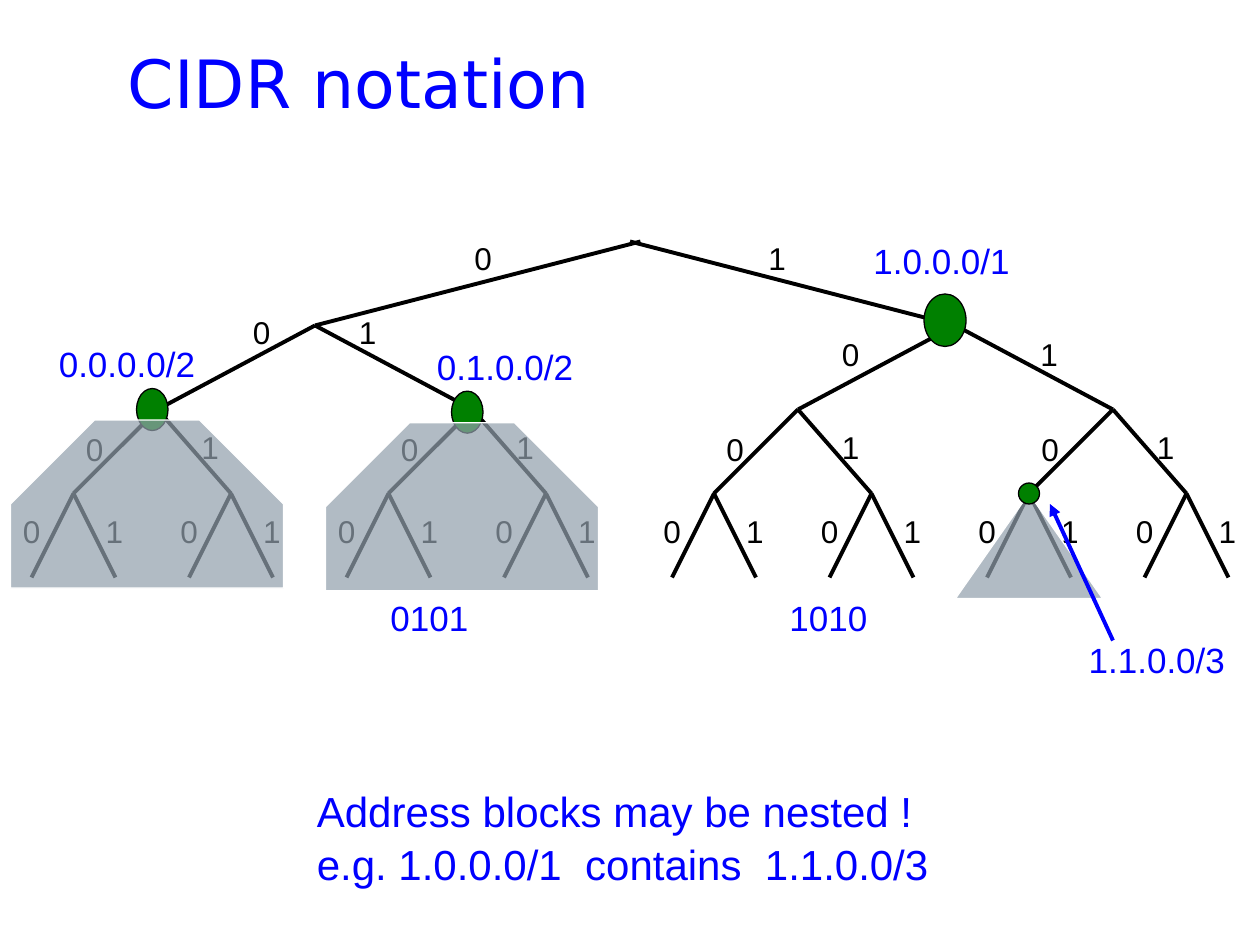
from dataclasses import dataclass

from lxml import etree
from pptx import Presentation
from pptx.dml.color import RGBColor
from pptx.enum.shapes import MSO_CONNECTOR, MSO_SHAPE
from pptx.enum.text import MSO_ANCHOR, MSO_AUTO_SIZE
from pptx.oxml.ns import qn
from pptx.util import Pt

STRAIGHT = MSO_CONNECTOR.STRAIGHT
OVAL = MSO_SHAPE.OVAL
SNIPPED = MSO_SHAPE.SNIP_2_SAME_RECTANGLE
TRIANGLE = MSO_SHAPE.ISOSCELES_TRIANGLE
TOP = MSO_ANCHOR.TOP
MIDDLE = MSO_ANCHOR.MIDDLE
FIT_SHAPE = MSO_AUTO_SIZE.SHAPE_TO_FIT_TEXT
NO_FIT = MSO_AUTO_SIZE.NONE


@dataclass(frozen=True)
class Theme:
    blue: str = "0000FF"
    black: str = "000000"
    white: str = "FFFFFF"
    green: str = "008000"
    shade: str = "92A0AD"
    shade_alpha: int = 71
    title_font: str = "DejaVu Sans"
    body_font: str = "Arial"
    title_size: float = 38
    note_size: float = 24
    address_size: float = 20
    bit_size: float = 18
    branch_width: float = 2.25
    outline_width: float = 0.75


@dataclass(frozen=True)
class Box:
    left: float
    top: float
    width: float
    height: float


@dataclass(frozen=True)
class Address:
    text: str
    box: Box


THEME = Theme()
LEVELS = (138, 186, 234, 282, 330)
HALVES = ((180, 366, (137.5, 198), 174), (546, 360, (474, 587.5), 187))
ADDRESSES = (
    Address("0101", Box(216, 336, 60, 31.5)),
    Address("1010", Box(444, 336, 60, 31.5)),
    Address("0.0.0.0/2", Box(26.5, 191, 93, 31.5)),
    Address("1.0.0.0/1", Box(492, 132, 93, 31.5)),
    Address("0.1.0.0/2", Box(242.5, 192.5, 93, 31.5)),
    Address("1.1.0.0/3", Box(615, 360, 93, 31.5)),
)


def add_text(slide, text: str, box: Box, *, size: float, color: str,
             font: str = THEME.body_font, spacing: float = 1.05,
             wrap: bool = False, anchor=TOP, fit=FIT_SHAPE) -> None:
    shape = slide.shapes.add_textbox(
        Pt(box.left), Pt(box.top), Pt(box.width), Pt(box.height))
    frame = shape.text_frame
    frame.word_wrap = wrap
    frame.auto_size = fit
    frame.vertical_anchor = anchor
    frame.text = text
    for paragraph in frame.paragraphs:
        paragraph.line_spacing = spacing
        paragraph.font.name = font
        paragraph.font.size = Pt(size)
        paragraph.font.color.rgb = RGBColor.from_string(color)


def add_bit(slide, text: str, left: float, top: float) -> None:
    add_text(slide, text, Box(left, top, 24.5, 29),
             size=THEME.bit_size, color=THEME.black)


def add_line(slide, start: tuple[float, float], end: tuple[float, float],
             color: str = THEME.black, arrow: bool = False) -> None:
    connector = slide.shapes.add_connector(
        STRAIGHT, *(Pt(value) for value in start + end))
    connector.line.color.rgb = RGBColor.from_string(color)
    connector.line.width = Pt(THEME.branch_width)
    if arrow:
        etree.SubElement(connector.line._get_or_add_ln(),
                         qn("a:tailEnd"), type="triangle")
    etree.SubElement(connector._element.spPr, qn("a:effectLst"))


def add_block(slide, kind, box: Box, fill: str, outline: str,
              alpha: int = 100):
    shape = slide.shapes.add_shape(
        kind, Pt(box.left), Pt(box.top), Pt(box.width), Pt(box.height))
    shape.shadow.inherit = False
    shape.fill.solid()
    shape.fill.fore_color.rgb = RGBColor.from_string(fill)
    shape.line.color.rgb = RGBColor.from_string(outline)
    shape.line.width = Pt(THEME.outline_width)
    if alpha < 100:
        color = shape._element.spPr.find(qn("a:solidFill"))[0]
        etree.SubElement(color, qn("a:alpha"), val=str(alpha * 1000))
    return shape


def add_node(slide, box: Box) -> None:
    add_block(slide, OVAL, box, THEME.green, THEME.black)


def add_shade(slide, kind, box: Box):
    return add_block(slide, kind, box, THEME.shade, THEME.white,
                     THEME.shade_alpha)


def add_subtree(slide, apex: float) -> None:
    top, middle, bottom = LEVELS[2:]
    for child in (apex - 48, apex + 42):
        add_line(slide, (apex, top), (child, middle))
        for leaf in (child - 24, child + 24):
            add_line(slide, (child, middle), (leaf, bottom))
        add_bit(slide, "0", child - 36, 288)
        add_bit(slide, "1", child + 11.25, 288)
    add_bit(slide, "0", apex - 48, 241)
    add_bit(slide, "1", apex + 18, 240)


def add_tree(slide) -> None:
    for center, root, bit_lefts, bit_top in HALVES:
        add_line(slide, (root, LEVELS[0]), (center, LEVELS[1]))
        for apex, bit, left in zip((center - 90, center + 90), "01", bit_lefts):
            add_line(slide, (center, LEVELS[1]), (apex, LEVELS[2]))
            add_bit(slide, bit, left, bit_top)
            add_subtree(slide, apex)
    add_bit(slide, "0", 264, 132)
    add_bit(slide, "1", 432, 132)


def add_address_blocks(slide) -> None:
    for left, top in ((6, 240), (186, 241.5)):
        add_node(slide, Box(left + 72, top - 18, 18, 24))
        shade = add_shade(slide, SNIPPED, Box(left, top, 156, 96))
        shade.adjustments[0] = 0.5
        shade.adjustments[1] = 0
    add_node(slide, Box(528, 168, 24, 30))
    add_shade(slide, TRIANGLE, Box(546, 282, 84, 60))
    add_node(slide, Box(582, 276, 12, 12))


def main() -> None:
    presentation = Presentation()
    presentation.slide_width = Pt(720)
    presentation.slide_height = Pt(540)
    slide = presentation.slides.add_slide(presentation.slide_layouts[6])
    add_text(slide, "CIDR notation", Box(66, 18, 636, 66),
             size=THEME.title_size, color=THEME.blue, font=THEME.title_font,
             spacing=0.8, wrap=True, anchor=MIDDLE, fit=NO_FIT)
    add_tree(slide)
    add_address_blocks(slide)
    for address in ADDRESSES:
        add_text(slide, address.text, address.box,
                 size=THEME.address_size, color=THEME.blue)
    add_line(slide, (636, 366), (600, 288), THEME.blue, arrow=True)
    add_text(slide,
             "Address blocks may be nested !\n"
             "e.g. 1.0.0.0/1  contains  1.1.0.0/3",
             Box(174, 444, 368.5, 65.5),
             size=THEME.note_size, color=THEME.blue)
    presentation.save("out.pptx")


if __name__ == "__main__":
    main()
